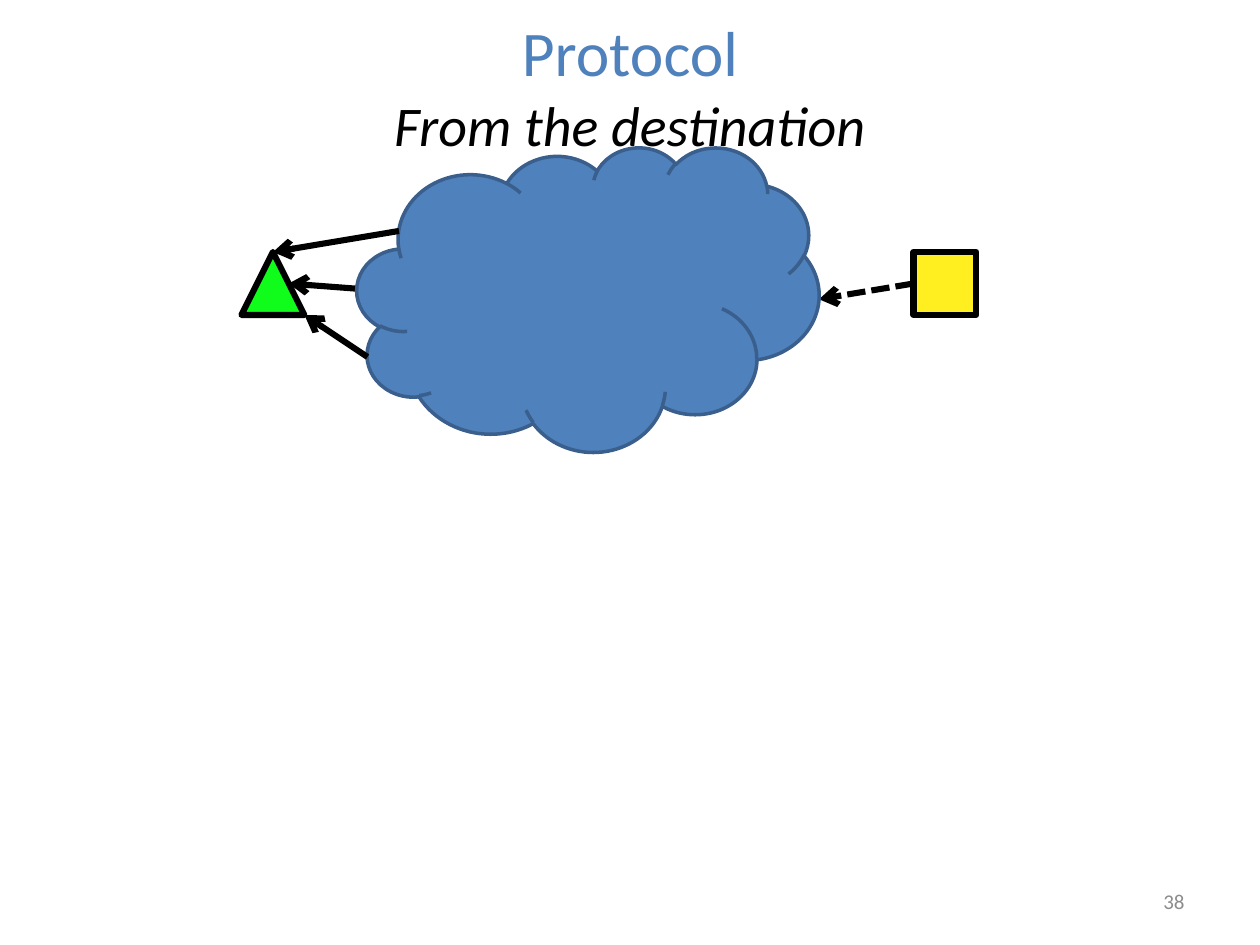
from typing import NamedTuple

from lxml import etree
from pptx import Presentation
from pptx.dml.color import RGBColor
from pptx.enum.dml import MSO_LINE
from pptx.enum.shapes import MSO_CONNECTOR, MSO_SHAPE
from pptx.enum.text import MSO_ANCHOR, MSO_AUTO_SIZE, PP_ALIGN
from pptx.oxml.ns import qn
from pptx.util import Inches, Pt

TRIANGLE, SQUARE, CLOUD = MSO_SHAPE.ISOSCELES_TRIANGLE, MSO_SHAPE.RECTANGLE, MSO_SHAPE.CLOUD
STRAIGHT, DASH = MSO_CONNECTOR.STRAIGHT, MSO_LINE.SQUARE_DOT
TOP, MIDDLE = MSO_ANCHOR.TOP, MSO_ANCHOR.MIDDLE
CENTER, RIGHT = PP_ALIGN.CENTER, PP_ALIGN.RIGHT
NO_FIT = MSO_AUTO_SIZE.NONE

BLUE = RGBColor(0x4F, 0x81, 0xBD)
DARK_BLUE = RGBColor(0x3A, 0x5F, 0x8C)
GREEN = RGBColor(0x10, 0xFC, 0x1B)
YELLOW = RGBColor(0xFF, 0xEF, 0x21)
BLACK = RGBColor(0, 0, 0)
GRAY = RGBColor(0x8C, 0x8C, 0x8C)

FONT = "Calibri"
LINE_WIDTH = 3.5
COLS, ROWS = 120, 90  # square grid cells across and down the slide


class Box(NamedTuple):
    """Left, top, width and height in grid cells."""
    x: float
    y: float
    w: float
    h: float


class Node(NamedTuple):
    kind: int
    box: Box
    fill: RGBColor
    line: RGBColor = BLACK
    width: float = LINE_WIDTH


class Arrow(NamedTuple):
    """Start and tip in grid cells."""
    start: tuple[float, float]
    tip: tuple[float, float]
    dashed: bool = False


SOURCE = Node(TRIANGLE, Box(23, 24, 6, 6), GREEN)
DESTINATION = Node(SQUARE, Box(87, 24, 6, 6), YELLOW)
NETWORK = Node(CLOUD, Box(34, 14, 44, 29), BLUE, DARK_BLUE, 2)

ARROWS_BEHIND = [
    Arrow((34, 27.5), (27.5, 27)),
    Arrow((87, 27), (78, 28.5), dashed=True),
]
ARROWS_IN_FRONT = [
    Arrow((35, 34), (29, 30)),
    Arrow((38, 22), (26, 24)),
]

prs = Presentation()
prs.slide_width, prs.slide_height = Inches(10), Inches(7.5)


def gx(col: float) -> int:
    return round(prs.slide_width * col / COLS)


def gy(row: float) -> int:
    return round(prs.slide_height * row / ROWS)


def place(box: Box) -> tuple[int, int, int, int]:
    return gx(box.x), gy(box.y), gx(box.w), gy(box.h)


def write(sp, text: str, *, size: float, color: RGBColor, align=CENTER,
          anchor=TOP, italic: bool = False, spacing: float = 1.0) -> None:
    tf = sp.text_frame
    tf.word_wrap = True
    tf.auto_size = NO_FIT
    tf.vertical_anchor = anchor
    p = tf.paragraphs[0]
    p.alignment, p.line_spacing = align, spacing
    r = p.add_run()
    r.text = text
    r.font.name, r.font.size = FONT, Pt(size)
    r.font.italic, r.font.color.rgb = italic, color


def draw_node(s, node: Node) -> None:
    sp = s.shapes.add_shape(node.kind, *place(node.box))
    sp.shadow.inherit = False
    sp.fill.solid()
    sp.fill.fore_color.rgb = node.fill
    sp.line.color.rgb = node.line
    sp.line.width = Pt(node.width)


def draw_arrow(s, arrow: Arrow) -> None:
    (x1, y1), (x2, y2) = arrow.start, arrow.tip
    sp = s.shapes.add_connector(STRAIGHT, gx(x1), gy(y1), gx(x2), gy(y2))
    sp.line.color.rgb = BLACK
    sp.line.width = Pt(LINE_WIDTH)
    if arrow.dashed:
        sp.line.dash_style = DASH
    # Open arrowhead at the tip, no shadow
    etree.SubElement(sp.line._get_or_add_ln(), qn("a:tailEnd"), type="arrow")
    etree.SubElement(sp._element.spPr, qn("a:effectLst"))


def main() -> None:
    s = prs.slides.add_slide(prs.slide_layouts[5])

    # Title
    title = s.shapes.title
    title.left, title.top, title.width, title.height = place(Box(6, 2, 108, 7))
    write(title, "Protocol", size=36.3, color=BLUE, anchor=MIDDLE, spacing=0.8)

    # Network diagram, from back to front
    draw_node(s, SOURCE)
    draw_node(s, DESTINATION)
    for arrow in ARROWS_BEHIND:
        draw_arrow(s, arrow)
    draw_node(s, NETWORK)
    for arrow in ARROWS_IN_FRONT:
        draw_arrow(s, arrow)

    # Subtitle and slide number
    subtitle = s.shapes.add_textbox(*place(Box(34, 8, 52, 7.7)))
    write(subtitle, "From the destination", size=32, color=BLACK, italic=True)
    number = s.shapes.add_textbox(*place(Box(86, 83.4, 28, 4.8)))
    write(number, "38", size=12, color=GRAY, align=RIGHT, anchor=MIDDLE)

    prs.save("out.pptx")


if __name__ == "__main__":
    main()
